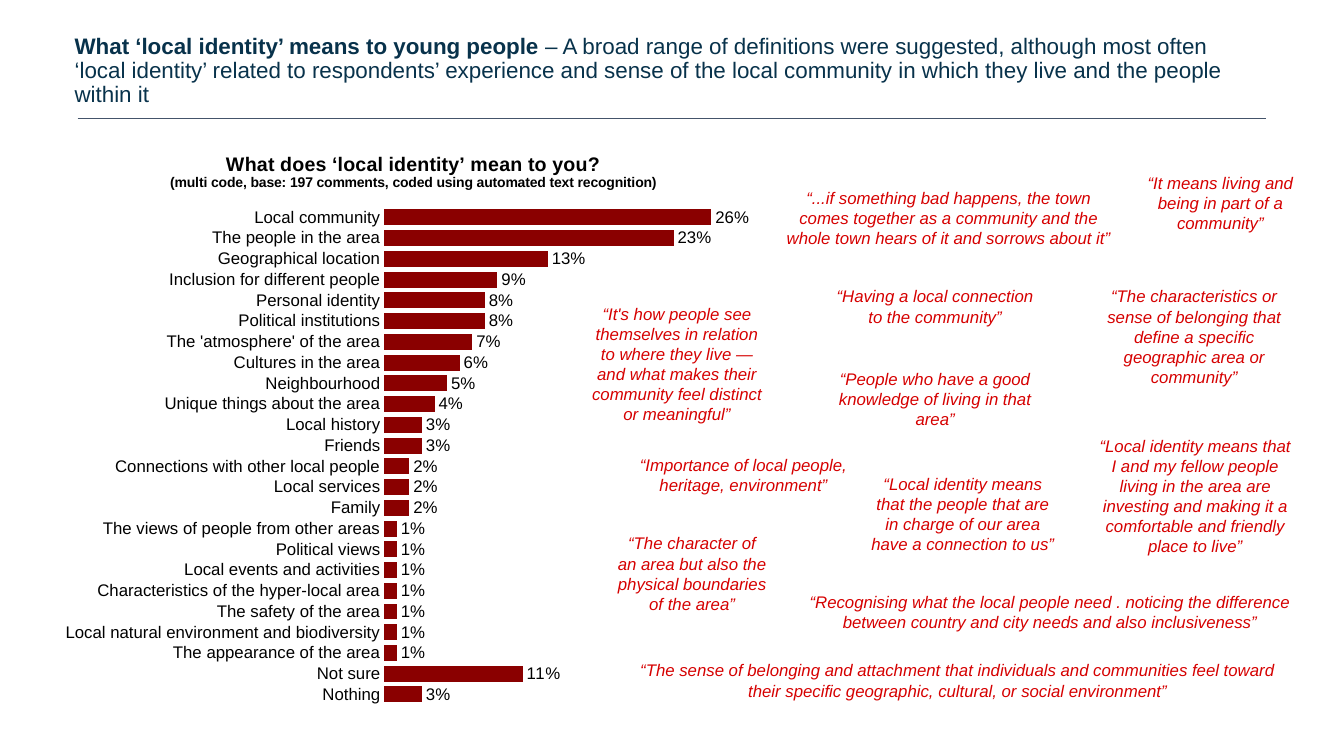
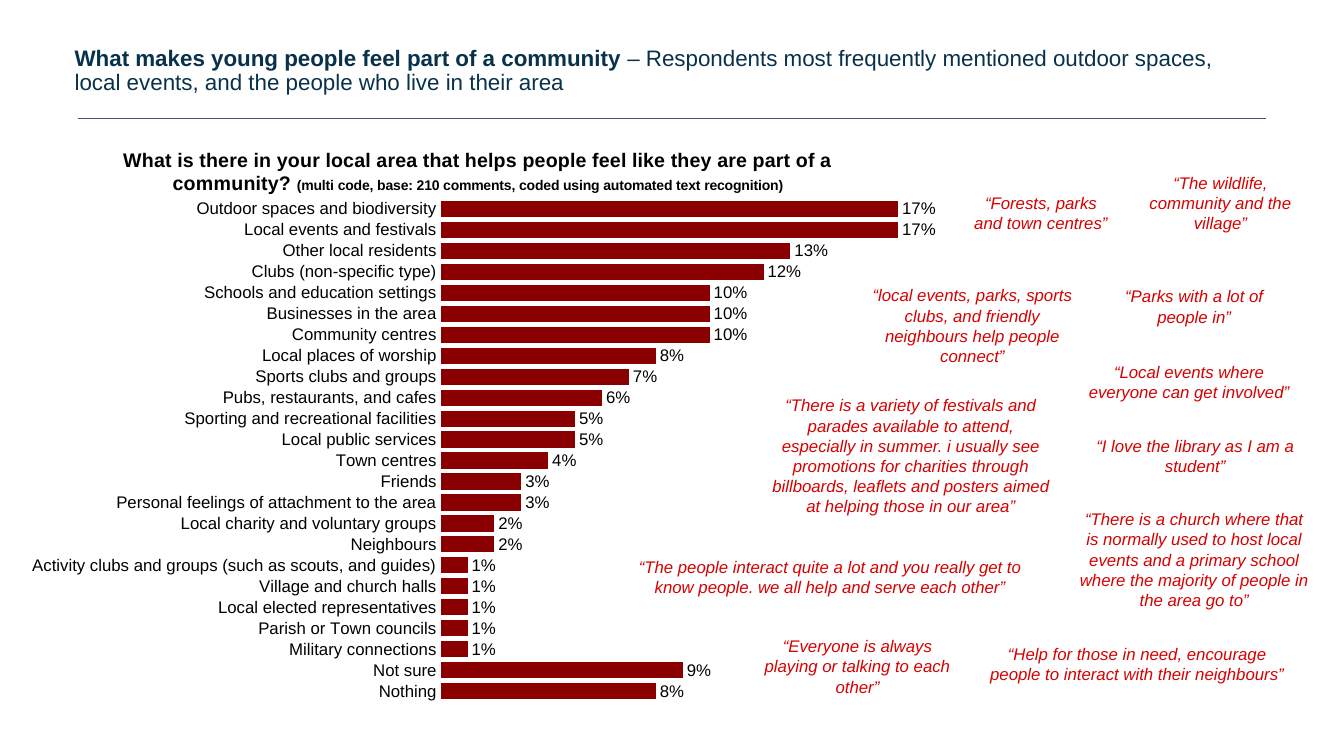
"""Builds two survey slides, each with a bar chart and quotes from young people."""
from lxml import etree
from pptx import Presentation
from pptx.chart.data import CategoryChartData
from pptx.dml.color import RGBColor
from pptx.enum.chart import XL_CHART_TYPE, XL_LABEL_POSITION, XL_TICK_MARK
from pptx.enum.shapes import MSO_CONNECTOR
from pptx.enum.text import MSO_ANCHOR, MSO_AUTO_SIZE, PP_ALIGN
from pptx.oxml import parse_xml
from pptx.oxml.ns import nsdecls, qn
from pptx.util import Inches, Pt

COLORS = {"title": "08324B", "rule": "44546A", "bar": "8A0000", "quote": "D60000", "text": "000000"}
FONT = "Arial"
TITLE = {"size": Pt(16), "color": "title"}
CHART_TITLE = {"size": Pt(14), "bold": True, "color": "text"}
CHART_NOTE = {"size": Pt(10), "bold": True, "color": "text"}
LABEL = {"size": Pt(12), "color": "text"}
QUOTE = {"size": Pt(12), "italic": True, "color": "quote"}

SLIDES = [
    {
        "title": ("What ‘local identity’ means to young people",
                  " – A broad range of definitions were suggested, although most often ‘local identity’ "
                  "related to respondents’ experience and sense of the local community in which they live "
                  "and the people within it"),
        "chart_at": (0.5, 1.3, 7.2, 5.81),
        "plot": (0.46, 0.13, 0.52, 0.85),
        "max": 0.3,
        "question": [["What does ‘local identity’ mean to you?"],
                     ["", "(multi code, base: 197 comments, coded using automated text recognition)"]],
        "bars": [
            ("Local community", 0.26),
            ("The people in the area", 0.23),
            ("Geographical location", 0.13),
            ("Inclusion for different people", 0.09),
            ("Personal identity", 0.08),
            ("Political institutions", 0.08),
            ("The 'atmosphere' of the area", 0.07),
            ("Cultures in the area", 0.06),
            ("Neighbourhood", 0.05),
            ("Unique things about the area", 0.04),
            ("Local history", 0.03),
            ("Friends", 0.03),
            ("Connections with other local people", 0.02),
            ("Local services", 0.02),
            ("Family", 0.02),
            ("The views of people from other areas", 0.01),
            ("Political views", 0.01),
            ("Local events and activities", 0.01),
            ("Characteristics of the hyper-local area", 0.01),
            ("The safety of the area", 0.01),
            ("Local natural environment and biodiversity", 0.01),
            ("The appearance of the area", 0.01),
            ("Not sure", 0.11),
            ("Nothing", 0.03),
        ],
        "quotes": [
            (7.7, 1.81, 3.42, 0.71, "“...if something bad happens, the town comes together as a community "
                                    "and the whole town hears of it and sorrows about it”"),
            (8.14, 2.79, 2.27, 0.5, "“Having a local connection to the community”"),
            (11.12, 1.66, 1.97, 0.71, "“It means living and being in part of a community”"),
            (10.86, 2.79, 1.97, 1.11, "“The characteristics or sense of belonging that define a specific "
                                      "geographic area or community”"),
            (5.73, 2.96, 1.97, 1.31, "“It's how people see themselves in relation to where they live — "
                                     "and what makes their community feel distinct or meaningful”"),
            (8.14, 3.61, 2.27, 0.71, "“People who have a good knowledge of living in that area”"),
            (10.77, 4.27, 2.17, 1.31, "“Local identity means that I and my fellow people living in the area "
                                      "are investing and making it a comfortable and friendly place to live”"),
            (6.24, 4.46, 2.27, 0.5, "“Importance of local people, heritage, environment”"),
            (8.51, 4.65, 2.08, 0.91, "“Local identity means that the people that are in charge of our area "
                                     "have a connection to us”"),
            (6.03, 5.24, 1.67, 0.91, "“The character of an area but also the physical boundaries of the area”"),
            (6.17, 6.5, 6.66, 0.5, "“The sense of belonging and attachment that individuals and communities "
                                   "feel toward their specific geographic, cultural, or social environment”"),
            (7.74, 5.82, 5.35, 0.5, "“Recognising what the local people need . noticing the difference "
                                    "between country and city needs and also inclusiveness”"),
        ],
    },
    {
        "title": ("What makes young people feel part of a community ",
                  "– Respondents most frequently mentioned outdoor spaces, local events, and the people "
                  "who live in their area"),
        "chart_at": (0.12, 1.27, 9.24, 5.81),
        "plot": (0.46, 0.12, 0.52, 0.86),
        "max": 0.18,
        "question": [["What is there in your local area that helps people feel like they are part of a community? ",
                      "(multi code, base: 210 comments, coded using automated text recognition)"]],
        "bars": [
            ("Outdoor spaces and biodiversity", 0.17),
            ("Local events and festivals", 0.17),
            ("Other local residents", 0.13),
            ("Clubs (non-specific type)", 0.12),
            ("Schools and education settings", 0.1),
            ("Businesses in the area", 0.1),
            ("Community centres", 0.1),
            ("Local places of worship", 0.08),
            ("Sports clubs and groups", 0.07),
            ("Pubs, restaurants, and cafes", 0.06),
            ("Sporting and recreational facilities", 0.05),
            ("Local public services", 0.05),
            ("Town centres", 0.04),
            ("Friends", 0.03),
            ("Personal feelings of attachment to the area", 0.03),
            ("Local charity and voluntary groups", 0.02),
            ("Neighbours", 0.02),
            ("Activity clubs and groups (such as scouts, and guides)", 0.01),
            ("Village and church halls", 0.01),
            ("Local elected representatives", 0.01),
            ("Parish or Town councils", 0.01),
            ("Military connections", 0.01),
            ("Not sure", 0.09),
            ("Nothing", 0.08),
        ],
        "quotes": [
            (9.53, 1.86, 1.59, 0.5, "“Forests, parks and town centres”"),
            (11.12, 1.66, 1.97, 0.5, "“The wildlife, community and the village”"),
            (10.86, 2.79, 1.97, 0.5, "“Parks with a lot of people in”"),
            (8.51, 2.78, 2.27, 0.91, "“local events, parks, sports clubs, and friendly neighbours help "
                                     "people connect”"),
            (10.77, 4.27, 2.17, 0.5, "“I love the library as I am a student”"),
            (10.66, 3.54, 2.27, 0.5, "“Local events where everyone can get involved”"),
            (7.56, 3.87, 2.95, 1.31, "“There is a variety of festivals and parades available to attend, "
                                     "especially in summer. i usually see promotions for charities through "
                                     "billboards, leaflets and posters aimed at helping those in our area”"),
            (7.47, 6.26, 2.07, 0.71, "“Everyone is always playing or talking to each other”"),
            (9.63, 6.34, 3.3, 0.5, "“Help for those in need, encourage people to interact with their neighbours”"),
            (10.6, 5, 2.49, 1.11, "“There is a church where that is normally used to host local events and a "
                                  "primary school where the majority of people in the area go to”"),
            (6.2, 5.47, 4.07, 0.5, "“The people interact quite a lot and you really get to know people. "
                                   "we all help and serve each other”"),
        ],
    },
]


def style(font, values):
    font.name = FONT
    for key, value in values.items():
        if key == "color":
            font.color.rgb = RGBColor.from_string(COLORS[value])
        else:
            setattr(font, key, value)


def add_run(p, text, values):
    r = p.add_run()
    r.text = text
    style(r.font, values)


prs = Presentation()
prs.slide_width, prs.slide_height = Inches(13.33), Inches(7.5)

for data in SLIDES:
    s = prs.slides.add_slide(prs.slide_layouts[5])

    sp = s.shapes.title
    sp.left, sp.top, sp.width, sp.height = (Inches(v) for v in (0.64, -0.02, 11.93, 1.45))
    tf = sp.text_frame
    tf.word_wrap = True
    tf.vertical_anchor = MSO_ANCHOR.MIDDLE
    p = tf.paragraphs[0]
    p.alignment = PP_ALIGN.LEFT
    p.line_spacing = 0.9
    for text, bold in zip(data["title"], (True, False)):
        add_run(p, text, {**TITLE, "bold": bold})

    rule = s.shapes.add_connector(MSO_CONNECTOR.STRAIGHT, Inches(0.77), Inches(1.17), Inches(12.56), Inches(1.17))
    rule.line.color.rgb = RGBColor.from_string(COLORS["rule"])
    rule.line.width = Pt(0.5)
    etree.SubElement(rule.element.spPr, qn("a:effectLst"))

    cd = CategoryChartData(number_format="0%")
    cd.categories = [name for name, _ in data["bars"]]
    cd.add_series("Series 1", [value for _, value in data["bars"]])
    chart = s.shapes.add_chart(XL_CHART_TYPE.BAR_CLUSTERED, *(Inches(v) for v in data["chart_at"]), cd).chart
    style(chart.font, {"size": Pt(10), "color": "text"})
    chart.has_legend = False

    tf = chart.chart_title.text_frame
    for i, texts in enumerate(data["question"]):
        p = tf.add_paragraph() if i else tf.paragraphs[0]
        for text, values in zip(texts, (CHART_TITLE, CHART_NOTE)):
            if text:
                add_run(p, text, values)

    axis = chart.category_axis
    axis.reverse_order = True
    axis.major_tick_mark = XL_TICK_MARK.NONE
    axis.format.line.fill.background()
    style(axis.tick_labels.font, LABEL)
    axis = chart.value_axis
    axis.minimum_scale, axis.maximum_scale = 0, data["max"]
    axis.has_major_gridlines = False
    axis.visible = False

    plot = chart.plots[0]
    plot.gap_width = 30
    plot.vary_by_categories = False
    fill = plot.series[0].format.fill
    fill.solid()
    fill.fore_color.rgb = RGBColor.from_string(COLORS["bar"])
    plot.has_data_labels = True
    labels = plot.data_labels
    labels.show_value = True
    labels.number_format, labels.number_format_is_linked = "0%", False
    labels.position = XL_LABEL_POSITION.OUTSIDE_END
    style(labels.font, LABEL)

    area = chart.element.find(".//" + qn("c:plotArea"))
    for old in area.findall(qn("c:layout")):
        area.remove(old)
    x, y, w, h = data["plot"]
    area.insert(0, parse_xml(
        f'<c:layout {nsdecls("c")}><c:manualLayout><c:layoutTarget val="inner"/>'
        f'<c:xMode val="edge"/><c:yMode val="edge"/>'
        f'<c:x val="{x}"/><c:y val="{y}"/><c:w val="{w}"/><c:h val="{h}"/></c:manualLayout></c:layout>'))

    for *box, text in data["quotes"]:
        tf = s.shapes.add_textbox(*(Inches(v) for v in box)).text_frame
        tf.word_wrap = True
        tf.auto_size = MSO_AUTO_SIZE.SHAPE_TO_FIT_TEXT
        p = tf.paragraphs[0]
        p.alignment = PP_ALIGN.CENTER
        add_run(p, text, QUOTE)

prs.save("out.pptx")
